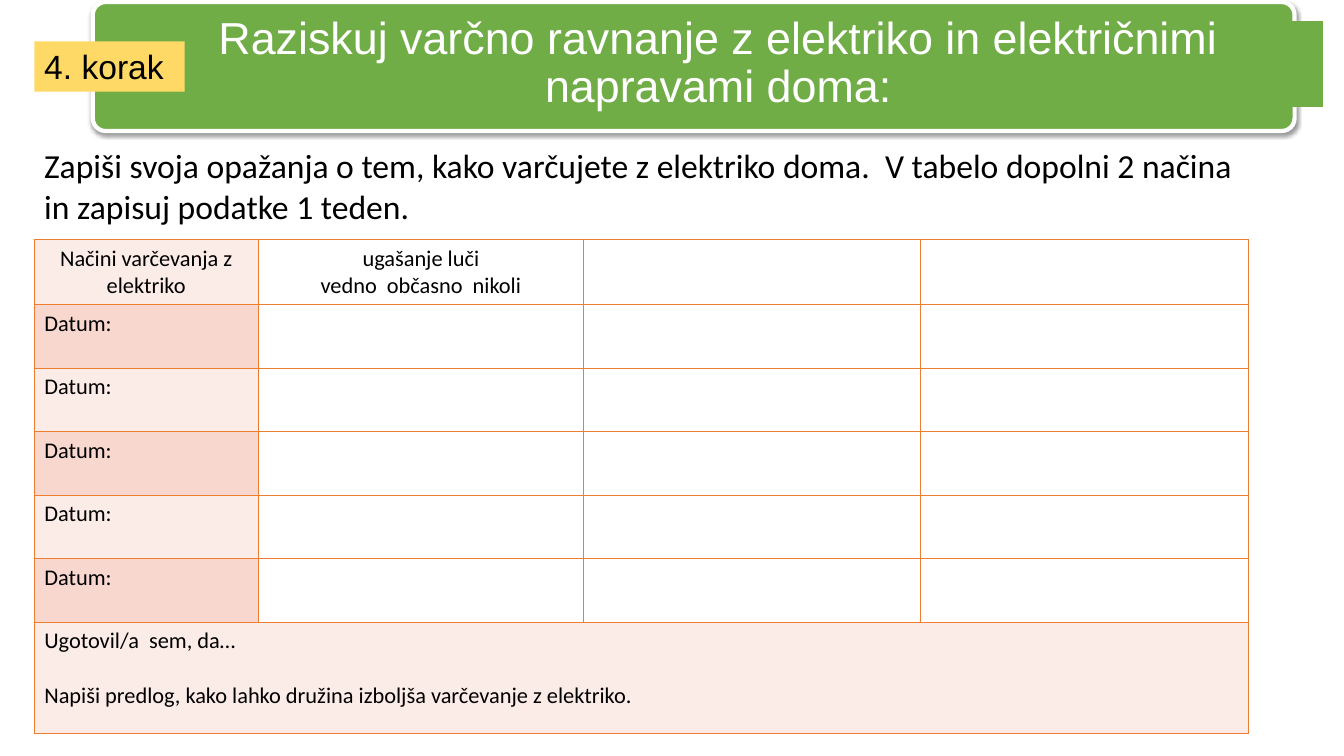
"""Builds the worksheet slide on saving electricity at home."""
from lxml import etree
from pptx import Presentation
from pptx.dml.color import RGBColor
from pptx.enum import shapes, text
from pptx.oxml import ns
from pptx.util import Inches, Pt

GREEN = RGBColor(0x70, 0xAD, 0x47)
YELLOW = RGBColor(0xFF, 0xD9, 0x66)
ORANGE = RGBColor(0xED, 0x7D, 0x31)
LIGHT_PINK = RGBColor(0xFC, 0xEC, 0xE8)
PINK = RGBColor(0xF8, 0xD7, 0xCE)
WHITE = RGBColor(0xFF, 0xFF, 0xFF)
BLACK = RGBColor(0, 0, 0)


def add_box(kind, left, top, width, height, fill):
    box = slide.shapes.add_shape(kind, Inches(left), Inches(top), Inches(width), Inches(height))
    box.shadow.inherit = False
    box.fill.solid()
    box.fill.fore_color.rgb = fill
    box.line.fill.background()
    return box


def write(paragraph, words, size, font, color=BLACK, align=text.PP_ALIGN.LEFT):
    paragraph.alignment = align
    run = paragraph.add_run()
    run.text = words
    run.font.size = Pt(size)
    run.font.name = font
    run.font.color.rgb = color


prs = Presentation()
prs.slide_width, prs.slide_height = Inches(13.33), Inches(7.5)
slide = prs.slides.add_slide(prs.slide_layouts[6])

banner = add_box(shapes.MSO_SHAPE.ROUNDED_RECTANGLE, 0.92, 0.02, 11.92, 1.28, GREEN)
banner.adjustments[0] = 0.1
banner.line.color.rgb = WHITE
banner.line.width = Pt(3)
effects = banner._element.spPr.find(ns.qn("a:effectLst"))
shadow = etree.SubElement(effects, ns.qn("a:outerShdw"), blurRad=str(Pt(3.1)),
                          dist=str(Pt(1.6)), dir="5400000", rotWithShape="0")
shade = etree.SubElement(shadow, ns.qn("a:srgbClr"), val=str(BLACK))
etree.SubElement(shade, ns.qn("a:alpha"), val="38000")

title = add_box(shapes.MSO_SHAPE.RECTANGLE, 1.13, 0.21, 11.99, 0.85, GREEN).text_frame
title.margin_left = title.margin_right = title.margin_top = title.margin_bottom = Inches(0.07)
title.vertical_anchor = text.MSO_ANCHOR.MIDDLE
title.paragraphs[0].line_spacing = 0.9
write(title.paragraphs[0], "Raziskuj varčno ravnanje z elektriko in električnimi napravami doma:",
      32, "Arial", WHITE, text.PP_ALIGN.CENTER)

step = add_box(shapes.MSO_SHAPE.RECTANGLE, 0.34, 0.41, 1.49, 0.5, YELLOW).text_frame
step.vertical_anchor = text.MSO_ANCHOR.TOP
write(step.paragraphs[0], "4. korak", 24, "Arial")

column_widths = [2.22, 3.23, 3.34, 3.25]
row_heights = [0.63] * 6 + [1.1]
log = slide.shapes.add_table(len(row_heights), len(column_widths), Inches(0.34), Inches(2.38),
                             Inches(sum(column_widths)), Inches(sum(row_heights))).table
for column, width in zip(log.columns, column_widths):
    column.width = Inches(width)
for row, height in zip(log.rows, row_heights):
    row.height = Inches(height)

last = len(row_heights) - 1
for r, row in enumerate(log.rows):
    for c, cell in enumerate(row.cells):
        properties = cell._tc.get_or_add_tcPr()
        for side in ("a:lnL", "a:lnR", "a:lnT", "a:lnB"):
            border = etree.SubElement(properties, ns.qn(side), w=str(Pt(1)))
            paint = etree.SubElement(border, ns.qn("a:solidFill"))
            etree.SubElement(paint, ns.qn("a:srgbClr"), val=str(ORANGE))
        cell.fill.solid()
        if c and r < last:
            cell.fill.fore_color.rgb = WHITE
        else:
            cell.fill.fore_color.rgb = PINK if r % 2 else LIGHT_PINK
log.cell(last, 0).merge(log.cell(last, len(column_widths) - 1))

entries = {
    (0, 0): ["Načini varčevanja z elektriko"],
    (0, 1): ["ugašanje luči", "vedno  občasno  nikoli"],
    (last, 0): ["Ugotovil/a  sem, da…",
                "Napiši predlog, kako lahko družina izboljša varčevanje z elektriko."],
}
entries.update({(r, 0): ["Datum:"] for r in range(1, last)})
for (r, c), lines in entries.items():
    frame = log.cell(r, c).text_frame
    for i, line in enumerate(lines):
        paragraph = frame.add_paragraph() if i else frame.paragraphs[0]
        write(paragraph, line, 16, "Calibri",
              align=text.PP_ALIGN.LEFT if r else text.PP_ALIGN.CENTER)
        if r == last and i:
            paragraph.space_before = Pt(19.5)

task = slide.shapes.add_textbox(Inches(0.34), Inches(1.39), Inches(12.24), Inches(0.91)).text_frame
task.word_wrap = True
write(task.paragraphs[0], "Zapiši svoja opažanja o tem, kako varčujete z elektriko doma.  "
      "V tabelo dopolni 2 načina in zapisuj podatke 1 teden.", 24, "Calibri")

prs.save("out.pptx")
